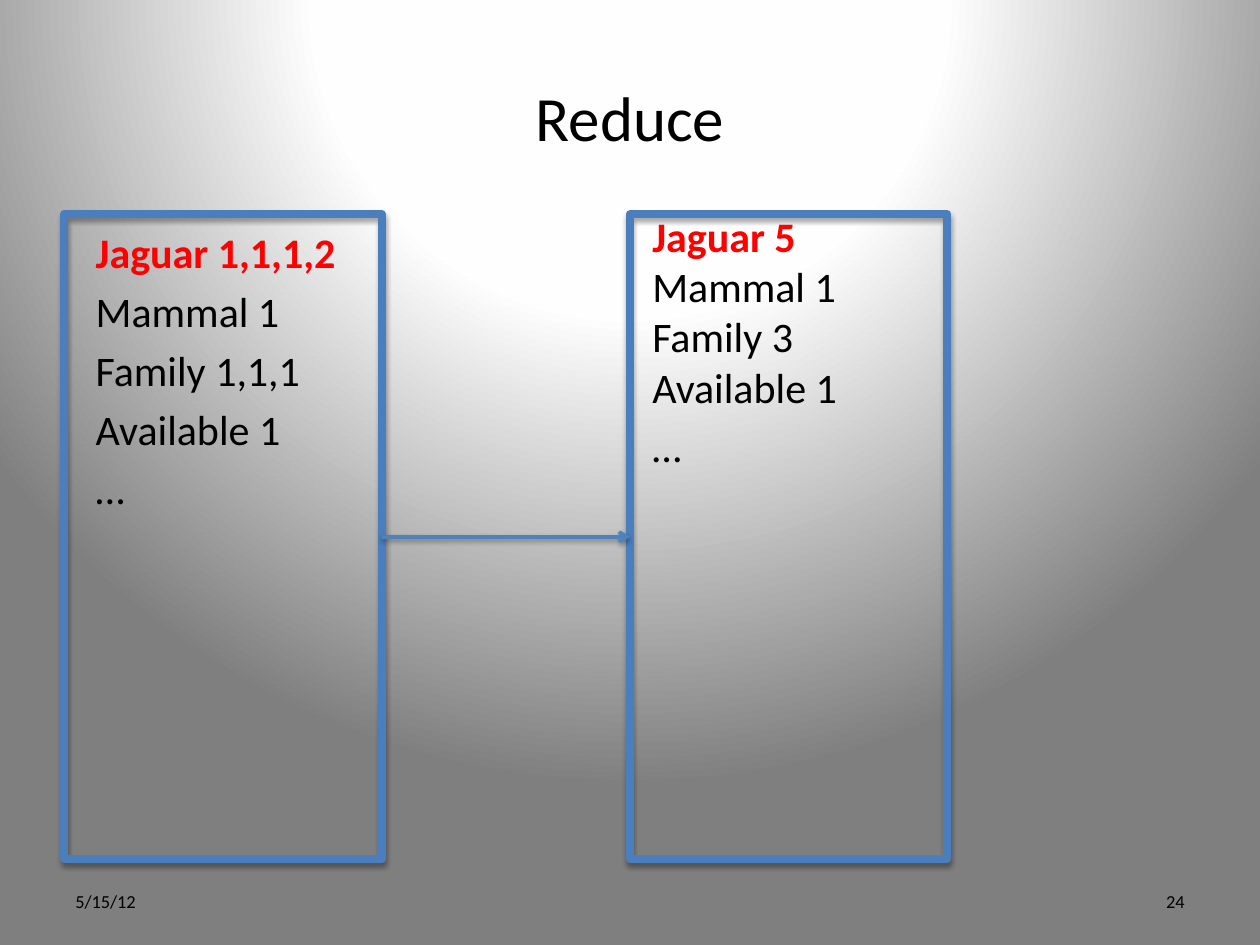
import pptx
import pptx.dml.color
import pptx.enum.shapes
import pptx.enum.text
import pptx.oxml
import pptx.oxml.ns
import pptx.util

Cm, Pt = pptx.util.Cm, pptx.util.Pt
RGBColor = pptx.dml.color.RGBColor
PP_ALIGN = pptx.enum.text.PP_ALIGN
MSO_ANCHOR = pptx.enum.text.MSO_ANCHOR
qn = pptx.oxml.ns.qn

BLACK = RGBColor(0x00, 0x00, 0x00)
RED = RGBColor(0xFF, 0x00, 0x00)
FRAME_BLUE = RGBColor(0x4B, 0x7E, 0xBC)
ARROW_BLUE = RGBColor(0x4F, 0x81, 0xBD)
NS = pptx.oxml.ns.nsdecls("a")


def add_text(box, lines, size, align=PP_ALIGN.LEFT, anchor=MSO_ANCHOR.TOP):
    frame = slide.shapes.add_textbox(*(Cm(n) for n in box)).text_frame
    frame.word_wrap = True
    frame.vertical_anchor = anchor
    frame.text = "\n".join(lines)
    for paragraph in frame.paragraphs:
        paragraph.alignment = align
        font = paragraph.runs[0].font
        font.name, font.size, font.color.rgb = "Calibri", Pt(size), BLACK
    return frame.paragraphs


def add_shadow(shape, opacity, distance):
    shape._element.spPr.append(pptx.oxml.parse_xml(
        f'<a:effectLst {NS}><a:outerShdw blurRad="{Pt(3.1)}" dist="{Pt(distance)}" '
        f'dir="5400000" rotWithShape="0"><a:srgbClr val="000000">'
        f'<a:alpha val="{opacity * 1000}"/></a:srgbClr></a:outerShdw></a:effectLst>'))


deck = pptx.Presentation()
deck.slide_width, deck.slide_height = Cm(25.4), Cm(19.05)
slide = deck.slides.add_slide(deck.slide_layouts[6])

# Background: circular gradient centred above the slide
slide.background.fill.solid()
background = slide.element.find(".//" + qn("p:bgPr"))
stops = "".join(f'<a:gs pos="{position * 1000}"><a:srgbClr val="{color}"/></a:gs>'
                for position, color in [(0, "FFFFFF"), (40, "FEFEFE"), (100, "7F7F7F")])
background.replace(background[0], pptx.oxml.parse_xml(
    f'<a:gradFill {NS} rotWithShape="1"><a:gsLst>{stops}</a:gsLst><a:path path="circle">'
    '<a:fillToRect l="50000" t="-80000" r="50000" b="180000"/></a:path></a:gradFill>'))

# Title
add_text((1.27, 0.76, 22.86, 3.18), ["Reduce"], 36, PP_ALIGN.CENTER, MSO_ANCHOR.MIDDLE)

# Grouped counts before the reduce step
grouped = add_text((1.68, 4.45, 11.23, 12.57),
                   ["Jaguar 1,1,1,2", "Mammal 1", "Family 1,1,1", "Available 1", "…"], 24)
for entry in grouped[1:]:
    entry.space_before = Pt(4.8)

# Date and slide number
add_text((1.27, 17.65, 5.92, 1.02), ["5/15/12"], 10.5, anchor=MSO_ANCHOR.MIDDLE)
add_text((18.21, 17.65, 5.92, 1.02), ["24"], 10.5, PP_ALIGN.RIGHT, MSO_ANCHOR.MIDDLE)

# Frames around the input and the output
frames = []
for left in (1.3, 12.7):
    frame = slide.shapes.add_shape(pptx.enum.shapes.MSO_SHAPE.RECTANGLE,
                                   Cm(left), Cm(4.32), Cm(6.4), Cm(13))
    frame.fill.background()
    frame.line.color.rgb = FRAME_BLUE
    frame.line.width = Pt(4.5)
    add_shadow(frame, 35, 1.8)
    frames.append(frame)

# Arrow from input to output
arrow = slide.shapes.add_connector(pptx.enum.shapes.MSO_CONNECTOR.STRAIGHT, 0, 0, 0, 0)
arrow.begin_connect(frames[0], 3)
arrow.end_connect(frames[1], 1)
arrow.line.color.rgb = ARROW_BLUE
arrow.line.width = Pt(2)
arrow.line._get_or_add_ln().append(pptx.oxml.parse_xml(f'<a:tailEnd {NS} type="arrow"/>'))
add_shadow(arrow, 38, 1.6)

# Totals after the reduce step
totals = add_text((12.9, 4.11, 8.2, 5.38),
                  ["Jaguar 5", "Mammal 1", "Family 3", "Available 1", "…"], 24)
totals[-1].space_before = Pt(4.8)

# The highlighted key in both lists
for entries in (grouped, totals):
    key_font = entries[0].runs[0].font
    key_font.bold = True
    key_font.color.rgb = RED

deck.save("out.pptx")
